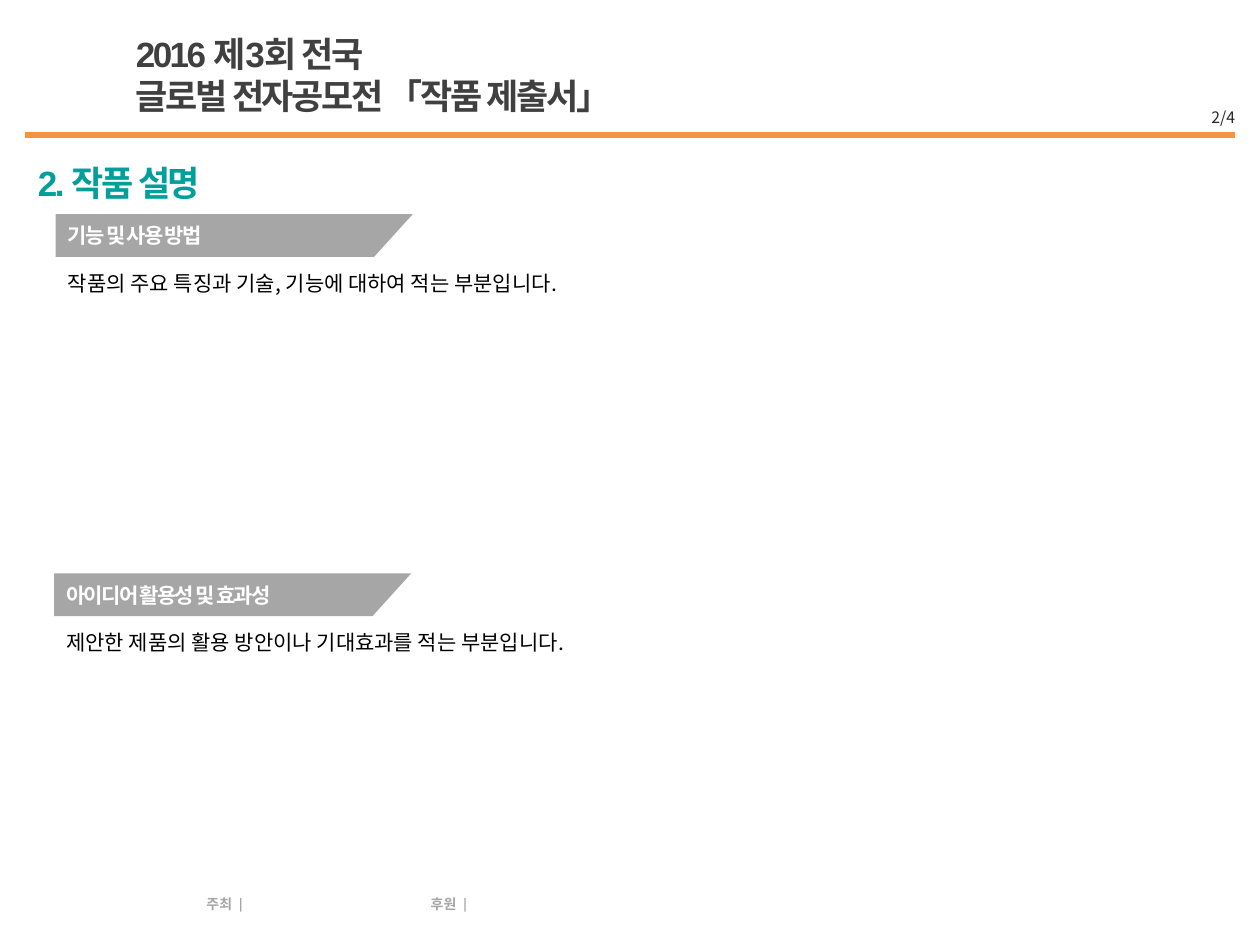
from lxml.etree import SubElement
from pptx import Presentation
from pptx.dml.color import RGBColor
from pptx.enum.shapes import MSO_CONNECTOR, MSO_SHAPE
from pptx.enum.text import MSO_ANCHOR, MSO_AUTO_SIZE, PP_ALIGN
from pptx.oxml.ns import qn
from pptx.util import Cm, Pt

COLORS = {
    "header": "404040",
    "title": "009F9A",
    "rule": "F69240",
    "gray": "A6A6A6",
    "body": "000000",
    "page": "262626",
    "white": "FFFFFF",
}
LATIN = "Arial"
KOREAN = "Noto Sans CJK KR"


def rgb(name):
    """Return the named palette colour."""
    return RGBColor.from_string(COLORS[name])


def write(sp, text, size, font, color, bold=False, spacing=0,
          align=PP_ALIGN.LEFT, anchor=MSO_ANCHOR.TOP):
    """Fill a shape with uniformly formatted text."""
    tf = sp.text_frame
    tf.text = text
    tf.word_wrap = True
    tf.auto_size = MSO_AUTO_SIZE.NONE
    tf.vertical_anchor = anchor
    for p in tf.paragraphs:
        p.alignment = align
        for r in p.runs:
            r.font.size = Pt(size)
            r.font.bold = bold
            r.font.name = font
            r.font.color.rgb = rgb(color)
            rPr = r.font._element
            SubElement(rPr, qn("a:ea")).set("typeface", font)
            if spacing:
                rPr.set("spc", str(int(spacing * 100)))


def add_text(s, x, y, w, h, *args, **kwargs):
    """Add a text box."""
    sp = s.shapes.add_textbox(Cm(x), Cm(y), Cm(w), Cm(h))
    write(sp, *args, **kwargs)


def paint(sp, color):
    """Give a shape a flat fill without line or shadow."""
    sp.shadow.inherit = False
    sp.fill.solid()
    sp.fill.fore_color.rgb = rgb(color)
    sp.line.fill.background()


def add_title(s, text):
    """Place the section title in the title placeholder."""
    sp = s.shapes.title
    sp.left, sp.top, sp.width, sp.height = Cm(0.51), Cm(3.12), Cm(6), Cm(1.11)
    write(sp, text, 20, LATIN, "title", bold=True, spacing=-1.5)


def add_section(s, x, y, heading, body):
    """Add a slanted heading ribbon with its description below."""
    w, h, slant = 7.2, 0.86, 0.78
    fb = s.shapes.build_freeform(Cm(x), Cm(y))
    fb.add_line_segments([(Cm(x + w), Cm(y)), (Cm(x + w - slant), Cm(y + h)),
                          (Cm(x), Cm(y + h))])
    sp = fb.convert_to_shape()
    paint(sp, "gray")
    write(sp, heading, 12, KOREAN, "white", bold=True, spacing=-1,
          anchor=MSO_ANCHOR.MIDDLE)
    add_text(s, x, y + 1, 22.38, 0.77, body, 12, KOREAN, "body")


def add_rule(s):
    """Draw the line under the header."""
    line = s.shapes.add_connector(MSO_CONNECTOR.STRAIGHT,
                                  Cm(0.51), Cm(2.72), Cm(24.89), Cm(2.72))
    line.line.color.rgb = rgb("rule")
    line.line.width = Pt(3)
    SubElement(line._element.spPr, qn("a:effectLst"))


def add_credit(s, x, label):
    """Add a footer label followed by a thin bar."""
    add_text(s, x, 17.93, 1.27, 0.56, label, 8, LATIN, "gray", bold=True)
    bar = s.shapes.add_shape(MSO_SHAPE.RECTANGLE,
                             Cm(x + 0.93), Cm(18.1), Cm(0.03), Cm(0.28))
    paint(bar, "gray")


def main():
    """Build and save the slide."""
    prs = Presentation()
    prs.slide_width, prs.slide_height = Cm(25.4), Cm(19.05)
    s = prs.slides.add_slide(prs.slide_layouts[5])
    for x, label in ((8.43, "후원"), (3.91, "주최")):
        add_credit(s, x, label)
    add_text(s, 2.49, 0.53, 22.02, 1.96,
             "2016 제3회 전국\n글로벌 전자공모전 「작품 제출서」",
             20, LATIN, "header", bold=True, spacing=-1.5)
    add_section(s, 1.12, 4.32, "기능 및 사용 방법",
                "작품의 주요 특징과 기술, 기능에 대하여 적는 부분입니다.")
    add_section(s, 1.09, 11.56, "아이디어 활용성 및 효과성",
                "제안한 제품의 활용 방안이나 기대효과를 적는 부분입니다.")
    add_rule(s)
    add_title(s, "2. 작품 설명")
    add_text(s, 23.93, 1.85, 1.22, 1.02, "2/4", 9, KOREAN, "page",
             align=PP_ALIGN.RIGHT, anchor=MSO_ANCHOR.MIDDLE)
    prs.save("out.pptx")


if __name__ == "__main__":
    main()
